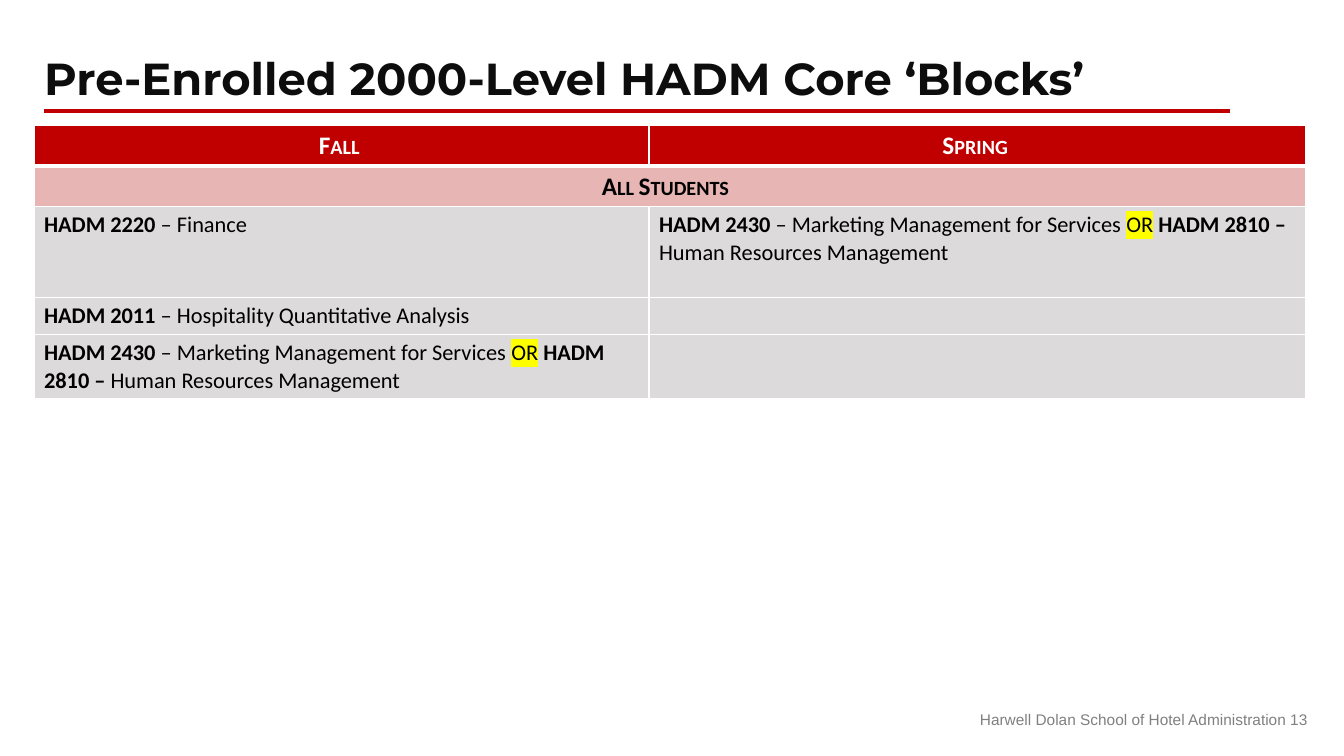
import dataclasses

import pptx
import pptx.dml.color
import pptx.enum.shapes
import pptx.enum.text
import pptx.oxml.ns
import pptx.util
from lxml import etree

PX = 914400 / 100.8  # EMU in one px
ALIGN = pptx.enum.text.PP_ALIGN
ANCHOR = pptx.enum.text.MSO_ANCHOR


@dataclasses.dataclass(frozen=True)
class Theme:
    red: str = "C00000"
    pink: str = "E8B5B5"
    grey: str = "DCDADA"
    white: str = "FFFFFF"
    black: str = "000000"
    title_ink: str = "0D0D0D"
    footer_ink: str = "808080"
    marker: str = "FFFF00"
    title_font: str = "Montserrat"
    table_font: str = "Calibri"
    footer_font: str = "Arial"
    title_size: int = 32
    heading_size: int = 18
    course_size: int = 16
    footer_size: int = 11


THEME = Theme()

# Each course text is a list of (words, format) parts
BOLD = {"bold": True}
MARKED = {"highlight": THEME.marker}
FINANCE = [("HADM 2220", BOLD), (" – Finance", {})]
QUANTITATIVE = [("HADM 2011 ", BOLD), ("– Hospitality Quantitative Analysis", {})]
MARKETING_OR_HR = [
    ("HADM 2430 ", BOLD), ("– Marketing Management for Services ", {}),
    ("OR", MARKED), (" ", {}),
    ("HADM 2810 – ", BOLD), ("Human Resources Management", {}),
]
COURSES = [(FINANCE, MARKETING_OR_HR), (QUANTITATIVE, []), (MARKETING_OR_HR, [])]
COLUMN_WIDTHS = [615, 657]
ROW_HEIGHTS = [41, 40, 91, 37, 63]


def px(length):
    return pptx.util.Emu(round(length * PX))


def rgb(color):
    return pptx.dml.color.RGBColor.from_string(color)


def add_xml(parent, tag, **attributes):
    return etree.SubElement(parent, pptx.oxml.ns.qn(tag), attributes)


def add_text(paragraph, text, *, size, font, color, bold=False,
             small_caps=False, highlight=None):
    run = paragraph.add_run()
    run.text = text
    run.font.size = pptx.util.Pt(size)
    run.font.bold = bold
    run.font.color.rgb = rgb(color)
    properties = run.font._element
    if small_caps:
        properties.set("cap", "small")
    if highlight:
        add_xml(add_xml(properties, "a:highlight"), "a:srgbClr", val=highlight)
    run.font.name = font


def place(shape, left, top, width, height):
    shape.left, shape.top = px(left), px(top)
    shape.width, shape.height = px(width), px(height)


def add_title(slide, text):
    title = slide.shapes.title
    place(title, 34, 46, 1109, 65)
    frame = title.text_frame
    frame.word_wrap = True
    frame.auto_size = pptx.enum.text.MSO_AUTO_SIZE.NONE
    frame.vertical_anchor = ANCHOR.TOP
    frame.paragraphs[0].alignment = ALIGN.LEFT
    add_text(frame.paragraphs[0], text, size=THEME.title_size,
             font=THEME.title_font, color=THEME.title_ink, bold=True)


def add_rule(slide, left, right, y):
    rule = slide.shapes.add_connector(
        pptx.enum.shapes.MSO_CONNECTOR.STRAIGHT, px(left), px(y), px(right), px(y))
    rule.line.color.rgb = rgb(THEME.red)
    rule.line.width = pptx.util.Pt(3.5)
    add_xml(rule._element.spPr, "a:effectLst")


def add_footer(slide, text):
    footer = slide.shapes.add_textbox(px(459), px(705), px(859), px(40))
    frame = footer.text_frame
    frame.word_wrap = True
    frame.paragraphs[0].alignment = ALIGN.RIGHT
    add_text(frame.paragraphs[0], text, size=THEME.footer_size,
             font=THEME.footer_font, color=THEME.footer_ink)


def style_cell(cell, fill, top=1, bottom=1):
    """Give a cell its white borders, in points, and its fill."""
    widths = {"a:lnL": 1, "a:lnR": 1, "a:lnT": top, "a:lnB": bottom}
    properties = cell._tc.get_or_add_tcPr()
    for side, width in widths.items():
        border = add_xml(properties, side, w=str(pptx.util.Pt(width)))
        add_xml(add_xml(border, "a:solidFill"), "a:srgbClr", val=THEME.white)
    cell.fill.solid()
    cell.fill.fore_color.rgb = rgb(fill)


def fill_heading(cell, text, color):
    paragraph = cell.text_frame.paragraphs[0]
    paragraph.alignment = ALIGN.CENTER
    add_text(paragraph, text, size=THEME.heading_size, font=THEME.table_font,
             color=color, bold=True, small_caps=True)


def fill_course(cell, parts):
    paragraph = cell.text_frame.paragraphs[0]
    for words, look in parts:
        add_text(paragraph, words, size=THEME.course_size,
                 font=THEME.table_font, color=THEME.black, **look)
    if not parts:  # keeps an empty row as low as a one-line row
        add_xml(paragraph._p, "a:endParaRPr", sz=str(THEME.course_size * 100))


def add_course_table(slide):
    frame = slide.shapes.add_table(
        len(ROW_HEIGHTS), len(COLUMN_WIDTHS), px(34), px(125),
        px(sum(COLUMN_WIDTHS)), px(sum(ROW_HEIGHTS)))
    table = frame.table
    table.first_row = table.horz_banding = False
    for column, width in zip(table.columns, COLUMN_WIDTHS):
        column.width = px(width)
    for row, height in zip(table.rows, ROW_HEIGHTS):
        row.height = px(height)

    # Terms
    for column, term in enumerate(["Fall ", "Spring "]):
        style_cell(table.cell(0, column), THEME.red, bottom=3)
        fill_heading(table.cell(0, column), term, THEME.white)

    # Student group, across both terms
    for column in range(len(COLUMN_WIDTHS)):
        style_cell(table.cell(1, column), THEME.pink, top=3)
    table.cell(1, 0).merge(table.cell(1, 1))
    fill_heading(table.cell(1, 0), "All Students  ", THEME.black)

    # Courses
    for row, courses in enumerate(COURSES, start=2):
        for column, parts in enumerate(courses):
            style_cell(table.cell(row, column), THEME.grey)
            fill_course(table.cell(row, column), parts)


def main():
    deck = pptx.Presentation()
    deck.slide_width, deck.slide_height = px(1344), px(756)
    slide = deck.slides.add_slide(deck.slide_layouts.get_by_name("Title Only"))
    add_title(slide, "Pre-Enrolled 2000-Level HADM Core ‘Blocks’")
    add_rule(slide, 44, 1230, 111)
    add_footer(slide, "Harwell Dolan School of Hotel Administration 13")
    add_course_table(slide)
    deck.save("out.pptx")


if __name__ == "__main__":
    main()
